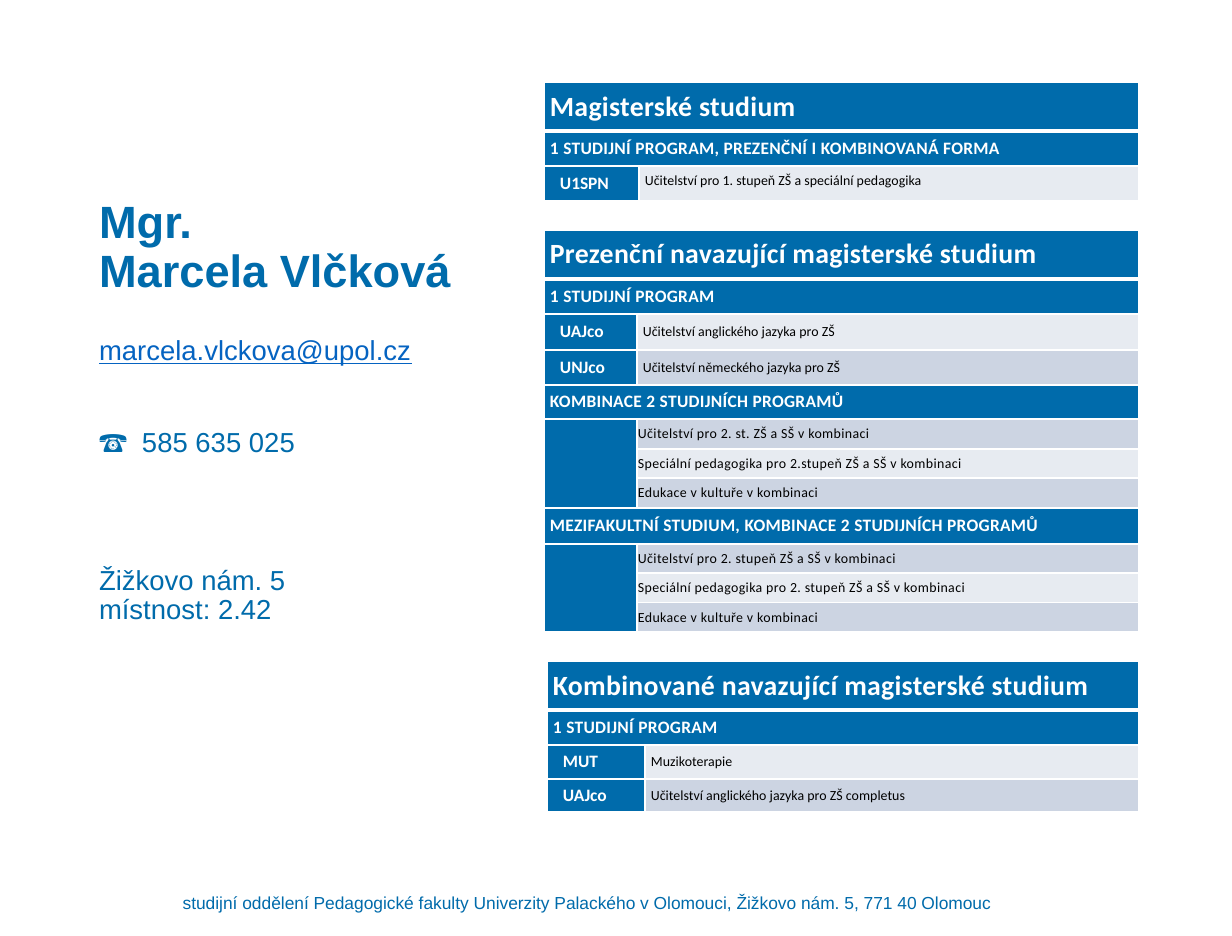
from lxml import etree
from pptx import Presentation
from pptx import util as u
from pptx.dml import color
from pptx.enum import text
from pptx.oxml import ns

PX = 7304
BLUE, LINK, WHITE, BLACK = "006BAB", "0563C1", "FFFFFF", "000000"
LIGHT, DARK = "E7EBF1", "CCD4E2"
MIDDLE, TOP, BOTTOM = text.MSO_ANCHOR.MIDDLE, text.MSO_ANCHOR.TOP, text.MSO_ANCHOR.BOTTOM

MASTER = [
    (49, "title", "Magisterské studium", ""),
    (35, "section", "1 STUDIJNÍ PROGRAM, PREZENČNÍ I KOMBINOVANÁ FORMA", ""),
    (35, "code", "U1SPN", "Učitelství pro 1. stupeň ZŠ a speciální pedagogika"),
]
FULL_TIME = [
    (49, "title", "Prezenční navazující magisterské studium", ""),
    (35, "section", "1 STUDIJNÍ PROGRAM", ""),
    (36, "code", "UAJco", "Učitelství anglického jazyka pro ZŠ"),
    (35, "code", "UNJco", "Učitelství německého jazyka pro ZŠ"),
    (34, "section", "KOMBINACE 2 STUDIJNÍCH PROGRAMŮ", ""),
    (30, "group", "", "Učitelství pro 2. st. ZŠ a SŠ v kombinaci"),
    (29, "group", "", "Speciální pedagogika pro 2.stupeň ZŠ a SŠ v kombinaci"),
    (30, "group", "", "Edukace v kultuře v kombinaci"),
    (36, "section", "MEZIFAKULTNÍ STUDIUM, KOMBINACE 2 STUDIJNÍCH PROGRAMŮ", ""),
    (29, "group", "", "Učitelství pro 2. stupeň ZŠ a SŠ v kombinaci"),
    (30, "group", "", "Speciální pedagogika pro 2. stupeň ZŠ a SŠ v kombinaci"),
    (29, "group", "", "Edukace v kultuře v kombinaci"),
]
PART_TIME = [
    (49, "title", "Kombinované navazující magisterské studium", ""),
    (35, "section", "1 STUDIJNÍ PROGRAM", ""),
    (34, "code", "MUT", "Muzikoterapie"),
    (33, "code", "UAJco", "Učitelství anglického jazyka pro ZŠ completus"),
]


def px(length):
    return u.Emu(length * PX)


def rgb(value):
    return color.RGBColor.from_string(value)


def style(para, size, shade, name="Arial", bold=False):
    para.font.size = u.Pt(size)
    para.font.name = name
    para.font.bold = bold
    para.font.color.rgb = rgb(shade)


def add_box(page, left, top, width, height, anchor=TOP):
    frame = page.shapes.add_textbox(px(left), px(top), px(width), px(height)).text_frame
    frame.word_wrap = True
    frame.vertical_anchor = anchor
    frame.margin_left = frame.margin_right = frame.margin_top = frame.margin_bottom = 0
    return frame


def add_tab(para, position):
    tabs = etree.SubElement(para._p.get_or_add_pPr(), ns.qn("a:tabLst"))
    etree.SubElement(tabs, ns.qn("a:tab"), pos=str(px(position)), algn="l")


def add_name(page):
    para = add_box(page, 99, 194, 448, 103, BOTTOM).paragraphs[0]
    para.text = "Mgr.\vMarcela Vlčková"
    para.line_spacing = 0.9
    style(para, 26, BLUE, bold=True)


def add_contacts(page):
    frame = add_box(page, 99, 337, 412, 535)
    contacts = [
        ("marcela.vlckova@upol.cz", LINK, 0),
        ("☎\t585 635 025", BLUE, 36),
        ("Žižkovo nám. 5\vmístnost: 2.42", BLUE, 62),
    ]
    for index, (words, shade, gap) in enumerate(contacts):
        para = frame.add_paragraph() if index else frame.paragraphs[0]
        para.text = words
        para.line_spacing = 0.9
        para.space_before = u.Pt(gap)
        if "\t" in words:
            add_tab(para, 43)
        style(para, 15.8, shade)
        para.font.underline = shade == LINK


def add_footer(page):
    para = add_box(page, 99, 883, 975, 30, BOTTOM).paragraphs[0]
    para.text = ("studijní oddělení Pedagogické fakulty Univerzity Palackého v Olomouci, "
                 "Žižkovo nám. 5, 771 40 Olomouc")
    para.alignment = text.PP_ALIGN.CENTER
    style(para, 10, BLUE)


def add_borders(cell, row):
    widths = {"lnL": 1, "lnR": 1, "lnT": 3 if row == 1 else 1, "lnB": 3 if row == 0 else 1}
    for side, points in widths.items():
        line = etree.SubElement(cell._tc.get_or_add_tcPr(), ns.qn(f"a:{side}"), w=str(u.Pt(points)))
        fill = etree.SubElement(line, ns.qn("a:solidFill"))
        etree.SubElement(fill, ns.qn("a:srgbClr"), val=WHITE)


def fill_cell(cell, row, words, shade, ink, size, bold, inset, indent, spaced, anchor):
    add_borders(cell, row)
    cell.fill.solid()
    cell.fill.fore_color.rgb = rgb(shade)
    cell.margin_left = px(inset + indent)
    cell.margin_right = cell.margin_top = cell.margin_bottom = px(inset)
    cell.vertical_anchor = anchor
    para = cell.text_frame.paragraphs[0]
    para.text = words
    style(para, size, ink, "Calibri", bold)
    if spaced:
        para._p.pPr.find(ns.qn("a:defRPr")).set("spc", "20")


def add_programmes(page, left, top, columns, rows, detail_anchor=MIDDLE):
    heights = [row[0] for row in rows]
    table = page.shapes.add_table(len(rows), 2, px(left), px(top),
                                  px(sum(columns)), px(sum(heights))).table
    table.first_row = table.horz_banding = False
    for column, width in zip(table.columns, columns):
        column.width = px(width)
    for index, (height, kind, label, detail) in enumerate(rows):
        table.rows[index].height = px(height)
        heading = kind in ("title", "section")
        inset = 1 if kind == "group" else 6
        size = {"title": 16, "group": 8}.get(kind, 10)
        first, second = table.cell(index, 0), table.cell(index, 1)
        stripe = BLUE if heading else DARK if index % 2 else LIGHT
        fill_cell(first, index, label, BLUE, WHITE, size, True, inset,
                  10 if kind == "code" else 0, heading, MIDDLE)
        fill_cell(second, index, detail, stripe, BLACK, 8, False, inset, 0,
                  kind == "group", detail_anchor)
        if heading:
            first.merge(second)
        elif kind == "group" and rows[index - 1][1] == "section":
            first.merge(table.cell(index + 2, 0))


def main():
    deck = Presentation()
    deck.slide_width, deck.slide_height = px(1232), px(936)
    page = deck.slides.add_slide(deck.slide_layouts[6])
    add_name(page)
    add_contacts(page)
    add_footer(page)
    add_programmes(page, 544, 82, (95, 500), MASTER, TOP)
    add_programmes(page, 544, 230, (93, 502), FULL_TIME)
    add_programmes(page, 547, 661, (98, 494), PART_TIME)
    deck.save("out.pptx")


if __name__ == "__main__":
    main()
